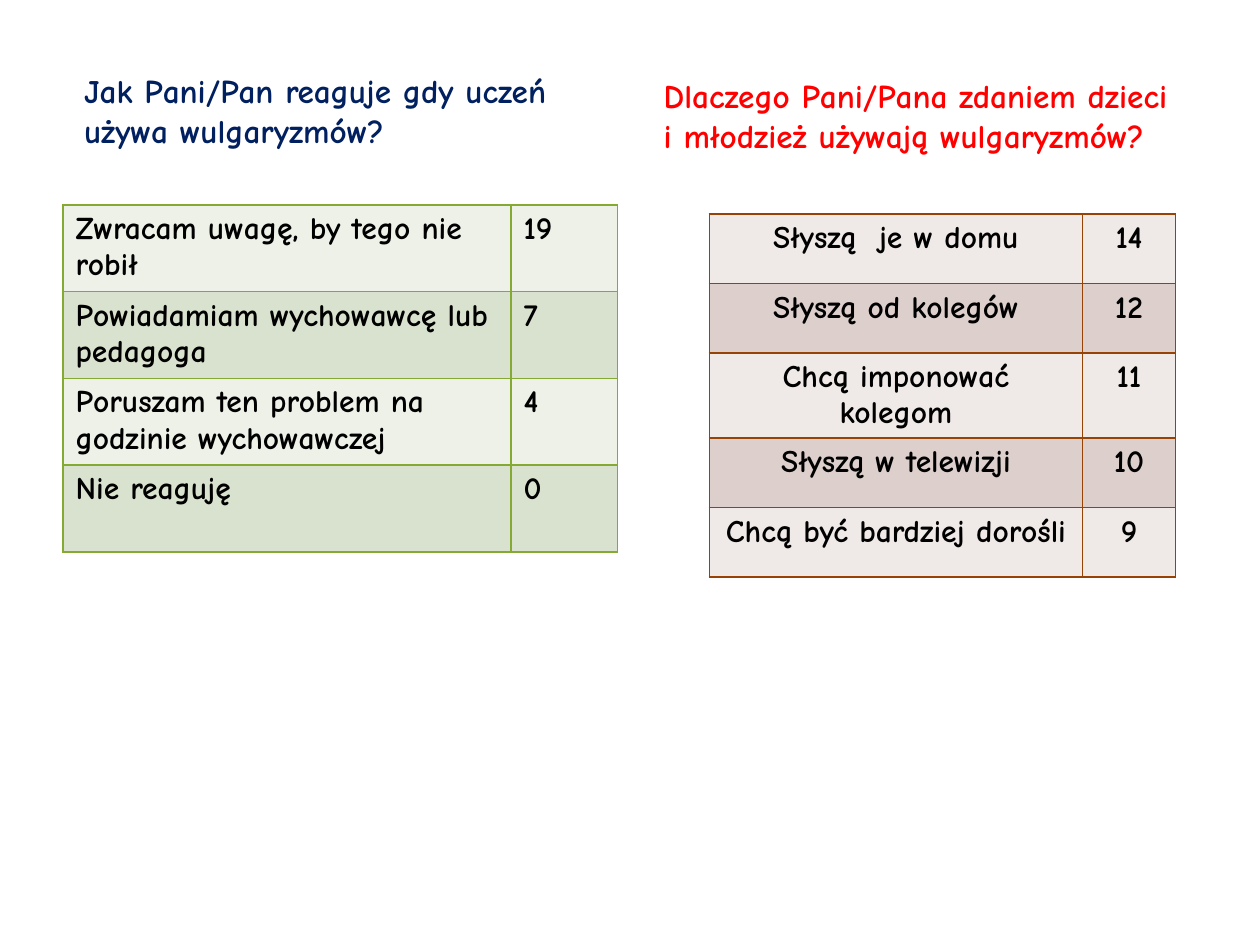
from lxml.etree import SubElement
from pptx import Presentation
from pptx.dml.color import RGBColor as RGB
from pptx.enum.shapes import MSO_SHAPE as Shape
from pptx.enum.text import MSO_ANCHOR as Anchor, PP_ALIGN as Align
from pptx.oxml.ns import qn
from pptx.util import Pt

FONT = "Comic Neue"
WHITE = RGB(0xFF, 0xFF, 0xFF)
BLACK = RGB(0, 0, 0)
NAVY = RGB(0x00, 0x20, 0x60)
RED = RGB(0xFF, 0, 0)
GREEN = RGB(0x84, 0xAA, 0x33)
BROWN = RGB(0x96, 0x43, 0x05)
GREENS = RGB(0xED, 0xF1, 0xE8), RGB(0xD9, 0xE2, 0xCE)
BROWNS = RGB(0xEF, 0xE9, 0xE7), RGB(0xDD, 0xCF, 0xCC)

REACT = [
    ("Zwracam uwagę, by tego nie robił", 19),
    ("Powiadamiam wychowawcę lub pedagoga", 7),
    ("Poruszam ten problem na godzinie wychowawczej", 4),
    ("Nie reaguję", 0),
]
CAUSES = [
    ("Słyszą  je w domu", 14),
    ("Słyszą od kolegów", 12),
    ("Chcą imponować kolegom", 11),
    ("Słyszą w telewizji", 10),
    ("Chcą być bardziej dorośli", 9),
]


def style(para, size, color):
    font = para.font
    font.name, font.size, font.bold = FONT, Pt(size), True
    font.color.rgb = color


def add_head(slide, box, text, color):
    head = slide.shapes.add_shape(Shape.RECTANGLE, *map(Pt, box))
    head.shadow.inherit = False
    head.fill.solid()
    head.fill.fore_color.rgb = WHITE
    head.line.color.rgb = WHITE
    head.line.width = Pt(0.85)
    frame = head.text_frame
    frame.word_wrap = True
    frame.vertical_anchor = Anchor.MIDDLE
    para = frame.paragraphs[0]
    para.text = text
    para.alignment = Align.LEFT
    para.space_before = Pt(1)
    para._p.get_or_add_pPr().set("marL", str(Pt(5)))
    style(para, 19, color)


def add_edges(cell, color):
    """Draw a 1 pt line on all four sides; the lines must precede the fill."""
    props = cell._tc.get_or_add_tcPr()
    for side in ("lnL", "lnR", "lnT", "lnB"):
        line = SubElement(props, qn(f"a:{side}"), w=str(Pt(1)))
        fill = SubElement(line, qn("a:solidFill"))
        SubElement(fill, qn("a:srgbClr"), val=str(color))


def add_grid(slide, box, rows, widths, edge, fills, align):
    """Place a table of answers and counts with alternating row fills."""
    grid = slide.shapes.add_table(len(rows), 2, *map(Pt, box)).table
    for col, width in zip(grid.columns, widths):
        col.width = Pt(width)
    for i, row in enumerate(rows):
        for j, value in enumerate(row):
            cell = grid.cell(i, j)
            add_edges(cell, edge)
            cell.fill.solid()
            cell.fill.fore_color.rgb = fills[i % 2]
            para = cell.text_frame.paragraphs[0]
            para.text = str(value)
            para.alignment = align
            style(para, 18, BLACK)


def main():
    deck = Presentation()
    deck.slide_width, deck.slide_height = Pt(720), Pt(540)
    slide = deck.slides.add_slide(deck.slide_layouts[6])
    add_head(slide, (36, 26, 316.8, 74),
             "Jak Pani/Pan reaguje gdy uczeń używa wulgaryzmów?", NAVY)
    add_head(slide, (367.2, 26, 316.8, 80),
             "Dlaczego Pani/Pana zdaniem dzieci i młodzież "
             "używają wulgaryzmów?", RED)
    add_grid(slide, (36, 117, 316.8, 198.4), REACT, (256, 60.8),
             GREEN, GREENS, Align.LEFT)
    add_grid(slide, (405.4, 122.4, 266.4, 198), CAUSES, (213.1, 53.3),
             BROWN, BROWNS, Align.CENTER)
    deck.save("out.pptx")


if __name__ == "__main__":
    main()
